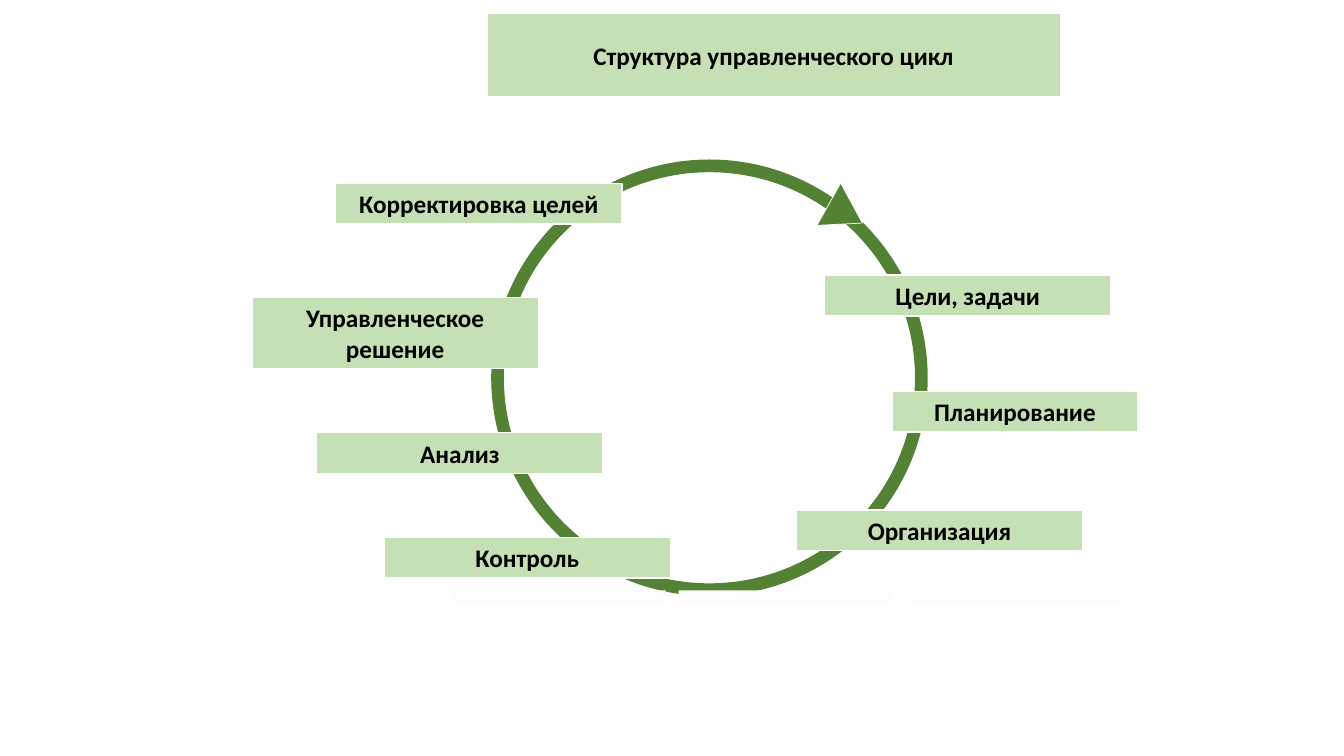
"""Build a slide showing the stages of the management cycle around a ring."""
from dataclasses import dataclass

from pptx import Presentation
from pptx.dml.color import RGBColor
from pptx.enum import shapes, text
from pptx.shapes.autoshape import Shape
from pptx.slide import Slide
from pptx.util import Cm, Pt

COLORS = {"ring": "548235", "label": "C5E0B4", "strip": "FDFDFD",
          "outline": "FFFFFF", "ink": "000000"}
FONT = "Calibri"
RING_SIZE = 11.0
RING_THICKNESS = 0.32
STRIP_COUNT = 3
STRIP_PITCH = 5.72


@dataclass(frozen=True)
class Box:
    """Position and size in centimetres."""
    left: float
    top: float
    width: float = 7.22
    height: float = 1.03


@dataclass(frozen=True)
class Stage:
    """One labelled stage of the cycle."""
    caption: str
    box: Box


TITLE = Stage("Структура управленческого цикл", Box(12.27, 0.87, 14.45))
STAGES = [
    Stage("Цели, задачи", Box(20.78, 6.93)),
    Stage("Планирование", Box(22.48, 9.86, width=6.2)),
    Stage("Организация", Box(20.07, 12.85)),
    Stage("Контроль", Box(9.68, 13.54)),
    Stage("Анализ", Box(7.98, 10.9)),
    Stage("Управленческое решение", Box(6.35, 7.49, height=1.8)),
    Stage("Корректировка целей", Box(8.46, 4.62)),
]


def rgb(name: str) -> RGBColor:
    """Look up a named colour."""
    return RGBColor.from_string(COLORS[name])


def paint(shape: Shape, fill: str, line_width: float = 0) -> None:
    """Fill a shape and give it a white outline or none."""
    shape.fill.solid()
    shape.fill.fore_color.rgb = rgb(fill)
    if line_width:
        shape.line.color.rgb = rgb("outline")
        shape.line.width = Pt(line_width)
    else:
        shape.line.fill.background()


def add_figure(slide: Slide, kind: shapes.MSO_SHAPE, box: Box,
               fill: str, line_width: float = 0) -> Shape:
    """Add a painted preset shape without a shadow."""
    figure = slide.shapes.add_shape(
        kind, Cm(box.left), Cm(box.top), Cm(box.width), Cm(box.height))
    figure.shadow.inherit = False
    paint(figure, fill, line_width)
    return figure


def write_caption(shape: Shape, caption: str) -> None:
    """Write a bold centred caption."""
    frame = shape.text_frame
    frame.text = caption
    frame.word_wrap = True
    frame.auto_size = text.MSO_AUTO_SIZE.SHAPE_TO_FIT_TEXT
    frame.vertical_anchor = text.MSO_ANCHOR.MIDDLE
    paragraph = frame.paragraphs[0]
    paragraph.alignment = text.PP_ALIGN.CENTER
    paragraph.font.name = FONT
    paragraph.font.size = Pt(18)
    paragraph.font.bold = True
    paragraph.font.color.rgb = rgb("ink")


def add_title(slide: Slide) -> None:
    """Place and format the title placeholder."""
    heading = slide.shapes.title
    box = TITLE.box
    heading.left, heading.top = Cm(box.left), Cm(box.top)
    heading.width, heading.height = Cm(box.width), Cm(box.height)
    paint(heading, "label", 1)
    write_caption(heading, TITLE.caption)


def add_cycle(slide: Slide) -> None:
    """Draw the ring, the strips across its foot and its arrowhead."""
    ring = add_figure(slide, shapes.MSO_SHAPE.DONUT,
                      Box(12.38, 4.02, RING_SIZE, RING_SIZE), "ring")
    ring.adjustments[0] = RING_THICKNESS / RING_SIZE
    for index in range(STRIP_COUNT):
        add_figure(slide, shapes.MSO_SHAPE.RECTANGLE,
                   Box(11.38 + index * STRIP_PITCH, 14.88, 5.4, 0.36), "strip")
    arrowhead = add_figure(slide, shapes.MSO_SHAPE.ISOSCELES_TRIANGLE,
                           Box(20.7, 4.9, 1.22, 0.97), "ring", 0.5)
    arrowhead.rotation = 119.3


def main() -> None:
    """Create and save the presentation."""
    deck = Presentation()
    deck.slide_width, deck.slide_height = Cm(33.87), Cm(19.05)
    slide = deck.slides.add_slide(deck.slide_layouts.get_by_name("Title Only"))
    add_title(slide)
    add_cycle(slide)
    for stage in STAGES:
        label = add_figure(slide, shapes.MSO_SHAPE.RECTANGLE, stage.box, "label", 1)
        write_caption(label, stage.caption)
    deck.save("out.pptx")


if __name__ == "__main__":
    main()
